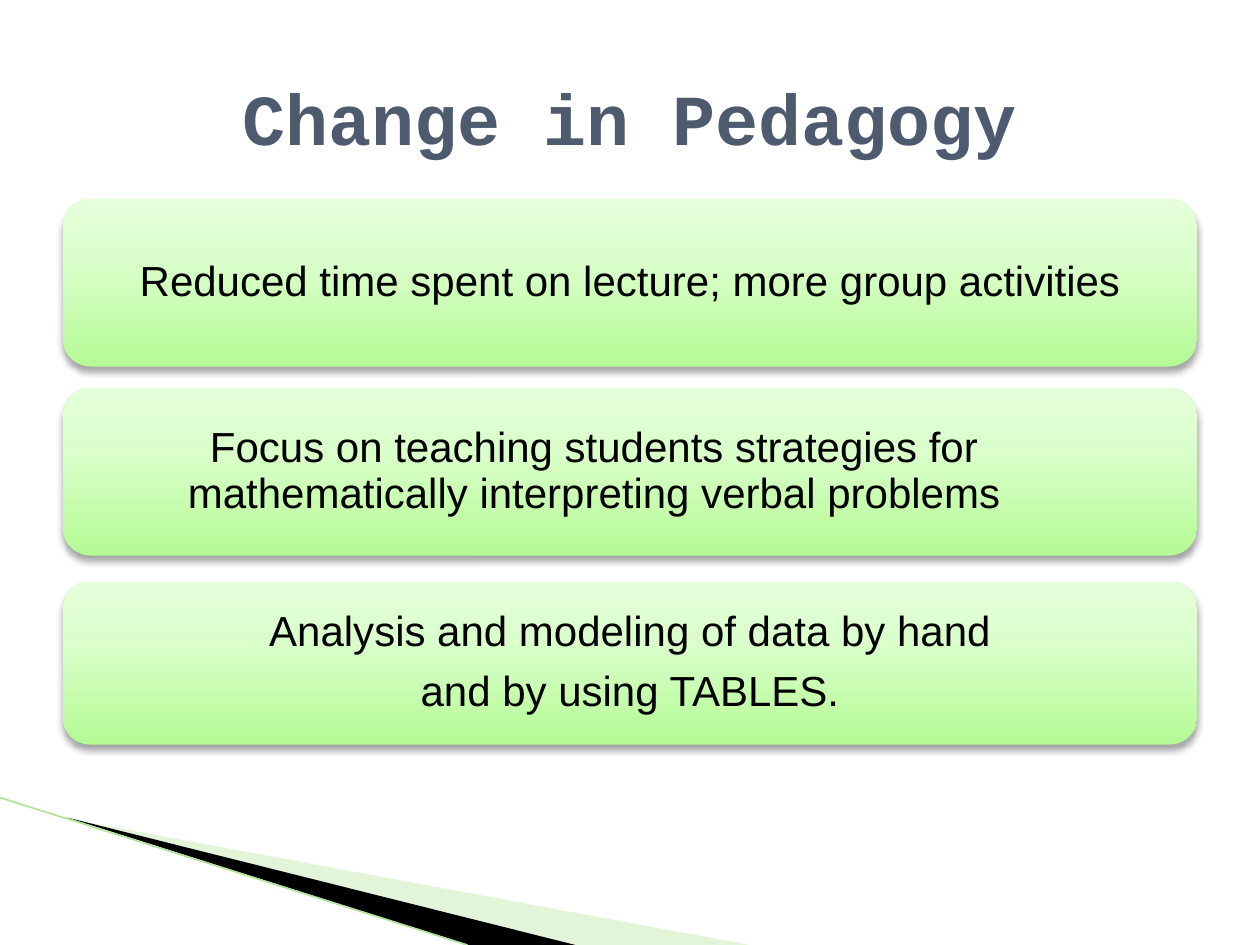
from lxml import etree
from pptx import Presentation
from pptx.dml.color import RGBColor
from pptx.enum.shapes import MSO_CONNECTOR, MSO_SHAPE
from pptx.enum.text import MSO_ANCHOR, PP_ALIGN
from pptx.oxml import parse_xml
from pptx.oxml.ns import qn
from pptx.util import Cm, Pt

ROUND = MSO_SHAPE.ROUNDED_RECTANGLE
LINE = MSO_CONNECTOR.STRAIGHT
MIDDLE = MSO_ANCHOR.MIDDLE
CENTER = PP_ALIGN.CENTER

BLACK = RGBColor(0x00, 0x00, 0x00)
SLATE = RGBColor(0x4E, 0x5B, 0x6F)
PALE = RGBColor(0xB8, 0xE7, 0xA1)
LEAF = RGBColor(0xB1, 0xE3, 0x99)
LOW = RGBColor(0xB5, 0xFA, 0x95)
MID = RGBColor(0xDB, 0xFF, 0xCC)
HIGH = RGBColor(0xE5, 0xFF, 0xDB)
STOPS = ((0, LOW), (65, MID), (100, HIGH))

NS = 'xmlns:a="http://schemas.openxmlformats.org/drawingml/2006/main"'


class Deck:
    """Holds the style and the current slide."""
    head = "Courier New"
    body = "Arial"
    left, wide, inset = 1.27, 22.86, 0.16

    def __init__(self):
        self.prs = Presentation()
        self.prs.slide_width = Cm(25.4)
        self.prs.slide_height = Cm(19.05)
        self.slide = self.prs.slides.add_slide(self.prs.slide_layouts[5])

    def add_run(self, para, text, face, size, color, bold=False):
        para.alignment = CENTER
        run = para.add_run()
        run.text = text
        font = run.font
        font.name, font.size, font.bold = face, Pt(size), bold
        font.color.rgb = color

    def title(self, text):
        box = self.slide.shapes.title
        box.left, box.top = Cm(1.27), Cm(0.76)
        box.width, box.height = Cm(22.86), Cm(3.18)
        frame = box.text_frame
        frame.vertical_anchor = MIDDLE
        self.add_run(frame.paragraphs[0], text, self.head, 41, SLATE, True)

    def wedge(self, points, color, alpha=100):
        spots = [(Cm(x), Cm(y)) for x, y in points]
        pen = self.slide.shapes.build_freeform(*spots[0])
        pen.add_line_segments(spots[1:], close=True)
        shape = pen.convert_to_shape()
        shape.shadow.inherit = False
        shape.line.fill.background()
        shape.fill.solid()
        shape.fill.fore_color.rgb = color
        if alpha < 100:
            tone = shape._element.spPr.find(".//" + qn("a:srgbClr"))
            etree.SubElement(tone, qn("a:alpha"), val=str(alpha * 1000))

    def rule(self, start, end, color, width):
        line = self.slide.shapes.add_connector(
            LINE, *(Cm(n) for n in start + end))
        line.line.color.rgb = color
        line.line.width = Pt(width)
        etree.SubElement(line._element.spPr, qn("a:effectLst"))

    def panel(self, group, top, high):
        shape = group.shapes.add_shape(
            ROUND, Cm(self.left), Cm(top), Cm(self.wide), Cm(high))
        shape.line.fill.background()
        stops = "".join(
            f'<a:gs pos="{pos * 1000}"><a:srgbClr val="{color}"/></a:gs>'
            for pos, color in STOPS)
        props = shape._element.spPr
        # Gradient goes after the geometry, shadow after the outline
        props.find(qn("a:prstGeom")).addnext(parse_xml(
            f'<a:gradFill {NS}><a:gsLst>{stops}</a:gsLst>'
            '<a:lin ang="16200000" scaled="0"/></a:gradFill>'))
        props.append(parse_xml(
            f'<a:effectLst {NS}><a:outerShdw blurRad="{Pt(4)}" '
            f'dist="{Pt(3)}" dir="5400000" rotWithShape="0">'
            '<a:srgbClr val="000000"><a:alpha val="35000"/></a:srgbClr>'
            '</a:outerShdw></a:effectLst>'))

    def card(self, top, high, lines, gap=0, shift=0):
        """Panel with text; shift insets the first line from the right."""
        group = self.slide.shapes.add_group_shape()
        self.panel(group, top, high)
        pad = self.inset
        box = group.shapes.add_textbox(
            Cm(self.left + pad), Cm(top + pad),
            Cm(self.wide - 2 * pad), Cm(high - 2 * pad))
        frame = box.text_frame
        frame.word_wrap = True
        frame.vertical_anchor = MIDDLE
        frame.margin_left = frame.margin_right = Cm(0.25)
        frame.margin_top = frame.margin_bottom = Cm(0.25)
        for i, text in enumerate(lines):
            para = frame.add_paragraph() if i else frame.paragraphs[0]
            para.line_spacing = 0.9
            para.space_after = Pt(gap)
            if shift and i == 0:
                para._p.get_or_add_pPr().set("marR", str(Cm(shift)))
            self.add_run(para, text, self.body, 24, BLACK)


def main():
    deck = Deck()

    # Corner decoration
    deck.wedge([(1.4, 16.51), (15.11, 19.05), (11.58, 19.05)], PALE, 40)
    deck.wedge([(1.35, 16.48), (11.6, 19.05), (9.45, 19.05)], BLACK)
    deck.rule((0, 16.08), (9.42, 19.05), LEAF, 0.95)

    # Title
    deck.title("Change in Pedagogy")

    # Cards
    deck.card(4.01, 3.38,
              ["Reduced time spent on lecture; more group activities"])
    deck.card(7.82, 3.38,
              ["Focus on teaching students strategies for",
               "mathematically interpreting verbal problems"], shift=1.45)
    deck.card(11.73, 3.28,
              ["Analysis and modeling of data by hand",
               "and by using TABLES."], gap=8.4)

    deck.prs.save("out.pptx")


if __name__ == "__main__":
    main()
